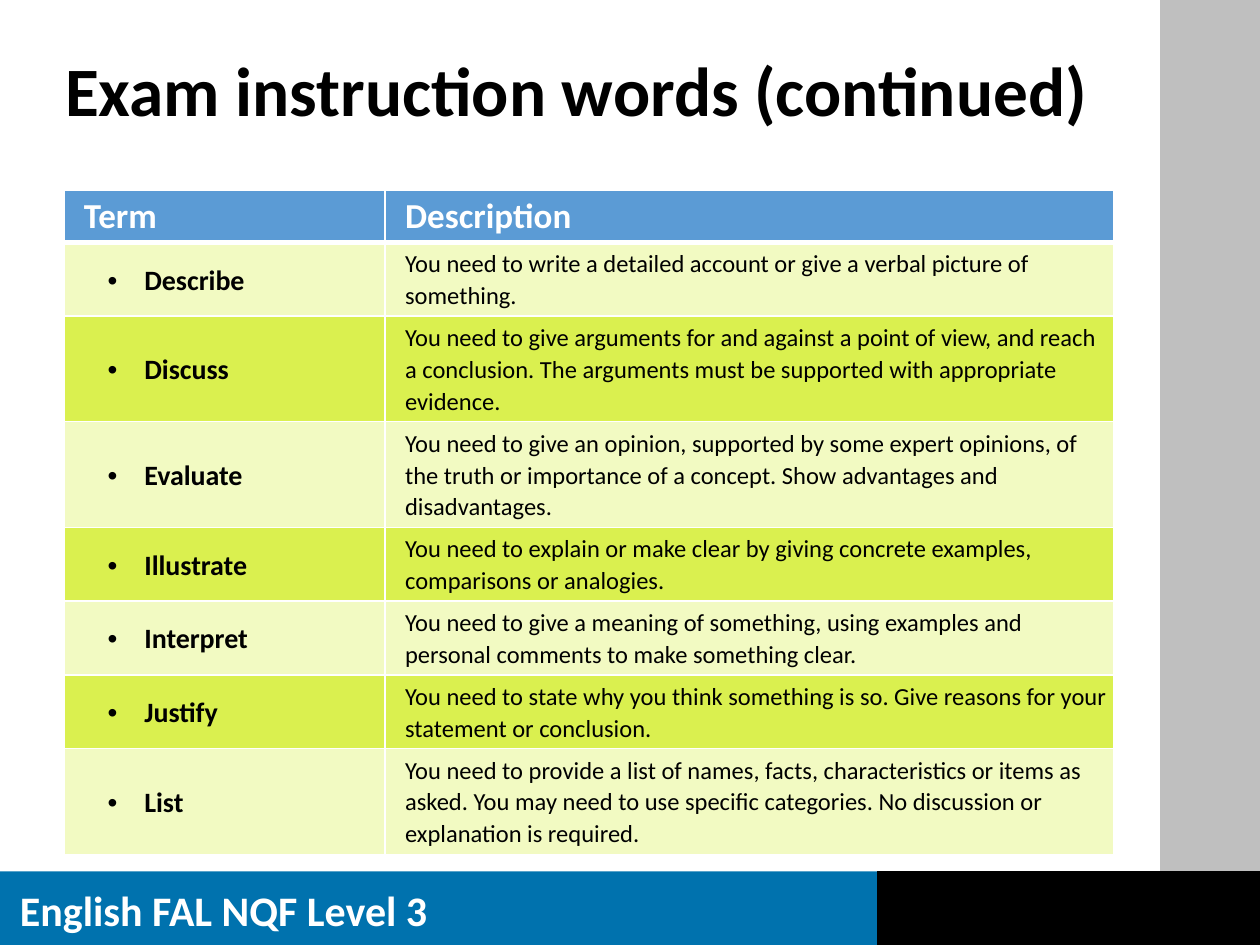
from dataclasses import dataclass
from typing import Any, Optional

import pptx
import pptx.dml.color
import pptx.enum.shapes
import pptx.enum.text
import pptx.oxml
import pptx.oxml.ns
import pptx.util

Pt = pptx.util.Pt
ANCHOR = pptx.enum.text.MSO_ANCHOR


@dataclass(frozen=True)
class Theme:
    font: str = "Calibri"
    white: str = "FFFFFF"
    black: str = "000000"
    grey: str = "BFBFBF"
    footer_blue: str = "0072AE"
    header_blue: str = "5B9BD5"
    stripes: tuple[str, str] = ("F2FAC2", "DAF04F")
    title_size: float = 39.6
    footer_size: float = 24
    header_size: float = 20
    term_size: float = 16
    description_size: float = 14


@dataclass(frozen=True)
class Bar:
    left: float
    top: float
    width: float
    height: float
    color: str
    outline: Optional[str] = None


@dataclass(frozen=True)
class Entry:
    term: str
    description: str
    lines: int


THEME = Theme()

BARS = [
    Bar(663, 0, 57, 539, THEME.grey),
    Bar(0, 498, 720, 42, THEME.footer_blue),
    Bar(501.5, 498, 218.5, 42, THEME.black, THEME.black),
]

ENTRIES = [
    Entry("Describe", "You need to write a detailed account or give a verbal picture of something.", 2),
    Entry("Discuss", "You need to give arguments for and against a point of view, and reach a "
          "conclusion. The arguments must be supported with appropriate evidence.", 3),
    Entry("Evaluate", "You need to give an opinion, supported by some expert opinions, of the truth "
          "or importance of a concept. Show advantages and disadvantages.", 3),
    Entry("Illustrate", "You need to explain or make clear by giving concrete examples, "
          "comparisons or analogies.", 2),
    Entry("Interpret", "You need to give a meaning of something, using examples and personal "
          "comments to make something clear.", 2),
    Entry("Justify", "You need to state why you think something is so. Give reasons for your "
          "statement or conclusion.", 2),
    Entry("List", "You need to provide a list of names, facts, characteristics or items as asked. "
          "You may need to use specific categories. No discussion or explanation is required.", 3),
]

# Table measures in points
COLUMN_WIDTHS = (183.5, 416.5)
HEADER_HEIGHT = 30
LINE_HEIGHT = 18.2
CELL_PADDING = 5.76
CELL_FORMAT = {"margin_left": Pt(11.5), "margin_right": Pt(0),
               "margin_top": Pt(2.88), "margin_bottom": Pt(2.88)}


def rgb(color: str) -> pptx.dml.color.RGBColor:
    return pptx.dml.color.RGBColor.from_string(color)


def apply_format(target: Any, values: dict[str, Any]) -> None:
    for name, value in values.items():
        setattr(target, name, value)


def write(frame: Any, text: str, size: float, color: str, bold: bool = True,
          spacing: Optional[float] = None) -> None:
    paragraph = frame.paragraphs[0]
    run = paragraph.add_run()
    run.text = text
    apply_format(paragraph, {"alignment": pptx.enum.text.PP_ALIGN.LEFT,
                             "line_spacing": spacing})
    apply_format(run.font, {"name": THEME.font, "size": Pt(size), "bold": bold})
    run.font.color.rgb = rgb(color)


def add_bullet(frame: Any) -> None:
    properties = frame.paragraphs[0]._p.get_or_add_pPr()
    properties.set("marL", str(Pt(34.5)))
    properties.set("indent", str(Pt(-21)))
    namespace = pptx.oxml.ns.nsdecls("a")
    for bullet in ('buFont {} typeface="Arial"', 'buChar {} char="•"'):
        properties.append(pptx.oxml.parse_xml(f"<a:{bullet.format(namespace)}/>"))


def style_cell(cell: Any, fill: str, bottom: float = 1, top: float = 1) -> None:
    apply_format(cell, CELL_FORMAT)
    properties = cell._tc.get_or_add_tcPr()
    for side, width in {"L": 1, "R": 1, "T": top, "B": bottom}.items():
        properties.append(pptx.oxml.parse_xml(
            f'<a:ln{side} {pptx.oxml.ns.nsdecls("a")} w="{Pt(width)}"><a:solidFill>'
            f'<a:srgbClr val="{THEME.white}"/></a:solidFill></a:ln{side}>'))
    cell.fill.solid()
    cell.fill.fore_color.rgb = rgb(fill)


def draw_bar(slide: Any, bar: Bar) -> None:
    band = slide.shapes.add_shape(
        pptx.enum.shapes.MSO_SHAPE.RECTANGLE,
        Pt(bar.left), Pt(bar.top), Pt(bar.width), Pt(bar.height))
    band.shadow.inherit = False
    band.fill.solid()
    band.fill.fore_color.rgb = rgb(bar.color)
    if bar.outline:
        band.line.color.rgb = rgb(bar.outline)
        band.line.width = Pt(1)
    else:
        band.line.fill.background()


def draw_title(slide: Any) -> None:
    title = slide.shapes.title
    apply_format(title, {"left": Pt(30), "top": Pt(29), "width": Pt(623), "height": Pt(57)})
    apply_format(title.text_frame, {"vertical_anchor": ANCHOR.TOP, "word_wrap": True,
                                    "auto_size": pptx.enum.text.MSO_AUTO_SIZE.NONE})
    write(title.text_frame, "Exam instruction words (continued)",
          THEME.title_size, THEME.black, spacing=0.9)


def draw_footer(slide: Any) -> None:
    footer = slide.shapes.add_textbox(Pt(4.3), Pt(502), Pt(270), Pt(36))
    apply_format(footer.text_frame, {"word_wrap": True,
                                     "auto_size": pptx.enum.text.MSO_AUTO_SIZE.SHAPE_TO_FIT_TEXT})
    write(footer.text_frame, "English FAL NQF Level 3", THEME.footer_size, THEME.white)


def draw_terms(slide: Any, entries: list[Entry]) -> None:
    heights = [HEADER_HEIGHT] + [entry.lines * LINE_HEIGHT + CELL_PADDING for entry in entries]
    terms = slide.shapes.add_table(
        len(heights), len(COLUMN_WIDTHS), Pt(36.5), Pt(108.5),
        Pt(sum(COLUMN_WIDTHS)), Pt(sum(heights))).table
    for column, width in zip(terms.columns, COLUMN_WIDTHS):
        column.width = Pt(width)
    for row, height in zip(terms.rows, heights):
        row.height = Pt(height)

    # Header row
    for cell, heading in zip(terms.rows[0].cells, ("Term", "Description")):
        style_cell(cell, THEME.header_blue, bottom=3)
        write(cell.text_frame, heading, THEME.header_size, THEME.white)

    # Striped entries
    for index, entry in enumerate(entries):
        term, description = terms.rows[index + 1].cells
        for cell in (term, description):
            style_cell(cell, THEME.stripes[index % 2], top=1 if index else 3)
        term.vertical_anchor = ANCHOR.MIDDLE
        write(term.text_frame, entry.term, THEME.term_size, THEME.black, spacing=1.07)
        add_bullet(term.text_frame)
        write(description.text_frame, entry.description, THEME.description_size,
              THEME.black, bold=False, spacing=1.07)


def main() -> None:
    deck = pptx.Presentation()
    apply_format(deck, {"slide_width": Pt(720), "slide_height": Pt(540)})
    slide = deck.slides.add_slide(deck.slide_layouts.get_by_name("Title Only"))
    for bar in BARS:
        draw_bar(slide, bar)
    draw_footer(slide)
    draw_title(slide)
    draw_terms(slide, ENTRIES)
    deck.save("out.pptx")


if __name__ == "__main__":
    main()
